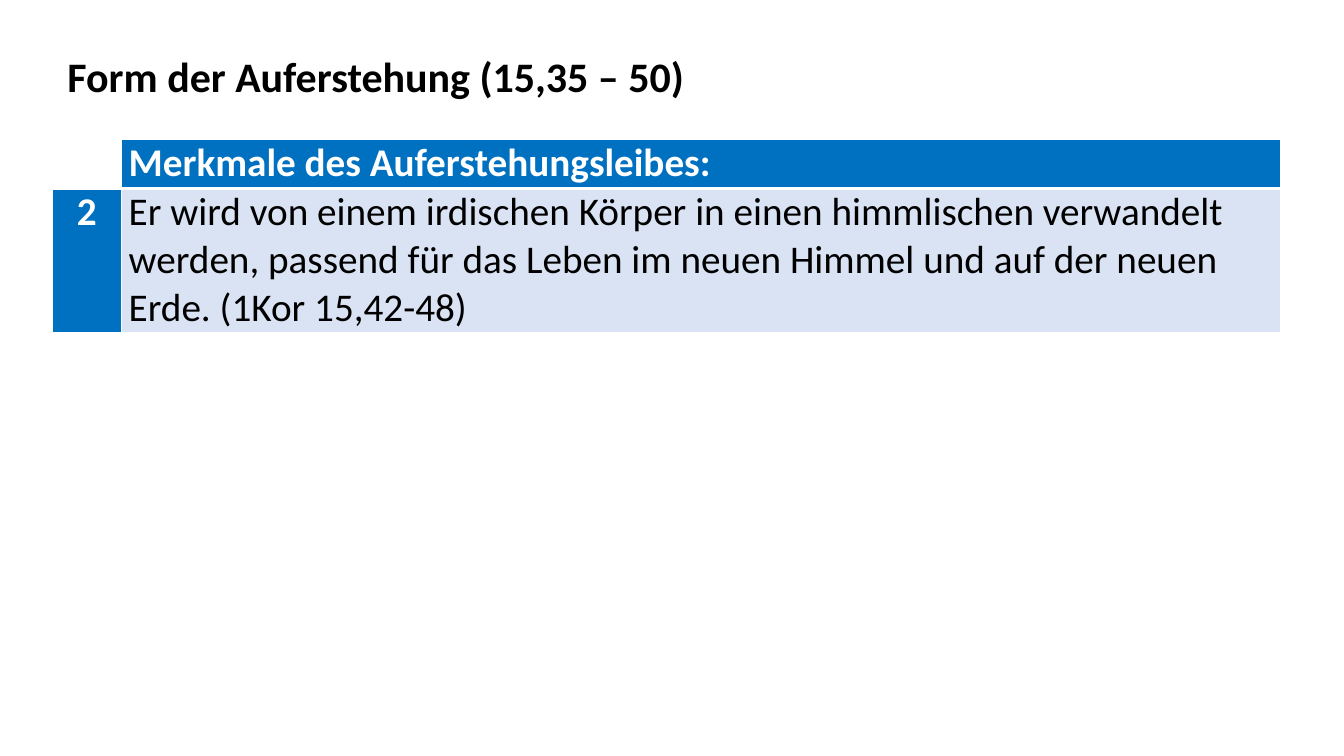
from dataclasses import dataclass

from lxml import etree
from pptx import Presentation
from pptx.dml.color import RGBColor
from pptx.enum.text import MSO_ANCHOR, MSO_AUTO_SIZE, PP_ALIGN
from pptx.oxml.ns import qn
from pptx.util import Pt

LEFT, CENTER = PP_ALIGN.LEFT, PP_ALIGN.CENTER
TOP = MSO_ANCHOR.TOP
NO_FIT = MSO_AUTO_SIZE.NONE
TITLE_ONLY = 5


@dataclass(frozen=True)
class Theme:
    font: str = "Calibri"
    title_size: int = 30
    table_size: int = 28
    black: str = "000000"
    white: str = "FFFFFF"
    blue: str = "0070C0"
    pale_blue: str = "DAE3F3"


theme = Theme()


def style_paragraph(para, size, color, bold, align):
    para.alignment = align
    para.font.name = theme.font
    para.font.size = Pt(size)
    para.font.bold = bold
    para.font.color.rgb = RGBColor.from_string(color)


def add_borders(cell, widths):
    """Draw white cell edges; widths are points for left, right, top, bottom."""
    properties = cell._tc.get_or_add_tcPr()
    for index, (side, width) in enumerate(zip("LRTB", widths)):
        line = etree.Element(qn(f"a:ln{side}"), w=str(Pt(width)))
        fill = etree.SubElement(line, qn("a:solidFill"))
        etree.SubElement(fill, qn("a:srgbClr"), val=theme.white)
        properties.insert(index, line)


deck = Presentation()
deck.slide_width, deck.slide_height = Pt(960), Pt(540)
page = deck.slides.add_slide(deck.slide_layouts[TITLE_ONLY])

title = page.shapes.title
title.left, title.top, title.width, title.height = Pt(41), Pt(32.4), Pt(460), Pt(44)
frame = title.text_frame
frame.text = "Form der Auferstehung (15,35 – 50)"
frame.word_wrap = False
frame.auto_size = NO_FIT
frame.vertical_anchor = TOP
style_paragraph(frame.paragraphs[0], theme.title_size, theme.black, True, LEFT)

column_widths = [49, 828]
row_heights = [35.2, 100.8]
table = page.shapes.add_table(
    2, 2, Pt(37.6), Pt(99.4), Pt(sum(column_widths)), Pt(sum(row_heights))
).table
table.first_row = table.horz_banding = False
for column, width in zip(table.columns, column_widths):
    column.width = Pt(width)
for row, height in zip(table.rows, row_heights):
    row.height = Pt(height)

# Each cell: text, fill, text colour, bold, alignment
feature_rows = [
    [
        ("", theme.white, theme.black, False, LEFT),
        ("Merkmale des Auferstehungsleibes:", theme.blue, theme.white, True, LEFT),
    ],
    [
        ("2", theme.blue, theme.white, True, CENTER),
        (
            "Er wird von einem irdischen Körper in einen himmlischen verwandelt "
            "werden, passend für das Leben im neuen Himmel und auf der neuen "
            "Erde. (1Kor 15,42-48)",
            theme.pale_blue, theme.black, False, LEFT,
        ),
    ],
]
row_borders = [(1, 1, 1, 3), (1, 1, 3, 1)]

for row, features, borders in zip(table.rows, feature_rows, row_borders):
    for cell, (text, fill, color, bold, align) in zip(row.cells, features):
        cell.text = text
        cell.margin_left = cell.margin_right = Pt(5.4)
        cell.margin_top = cell.margin_bottom = Pt(0)
        cell.fill.solid()
        cell.fill.fore_color.rgb = RGBColor.from_string(fill)
        add_borders(cell, borders)
        style_paragraph(cell.text_frame.paragraphs[0], theme.table_size, color, bold, align)

deck.save("out.pptx")
